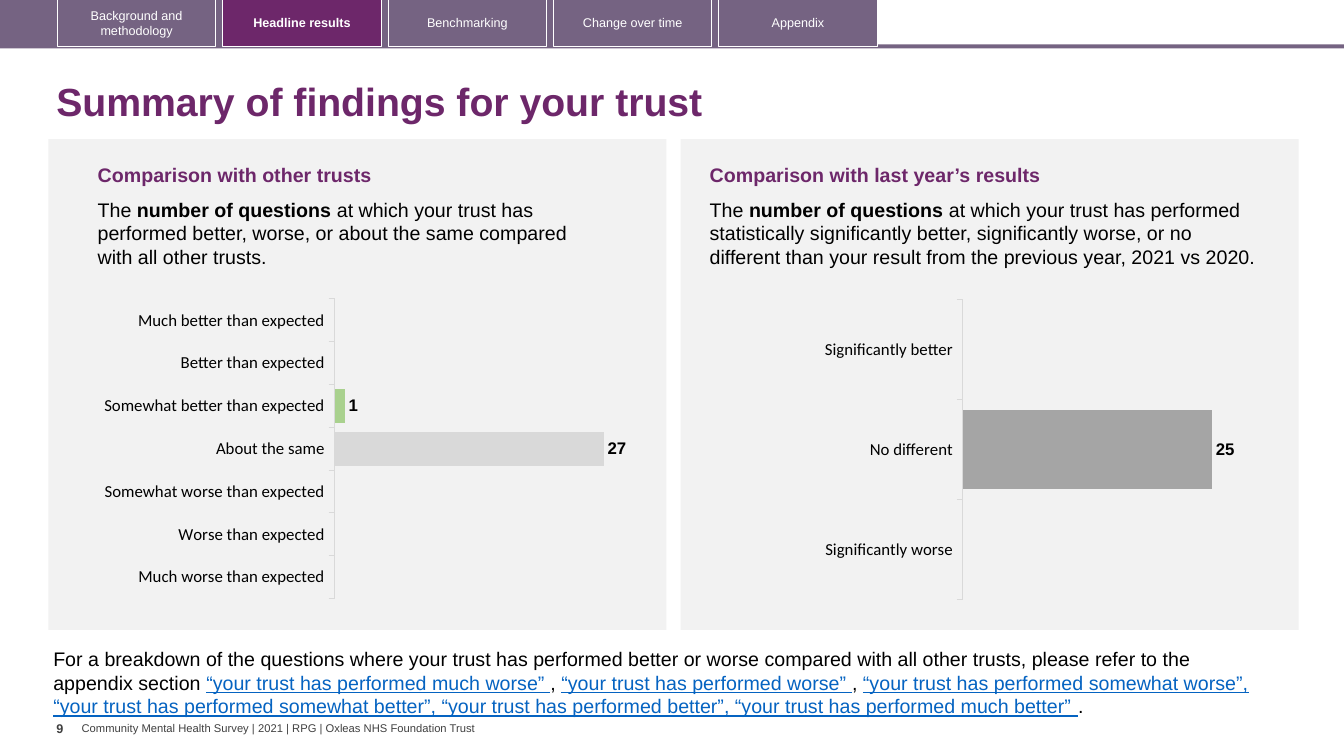
from dataclasses import dataclass
from typing import Optional

from lxml.etree import SubElement
from pptx import Presentation
from pptx.chart.data import CategoryChartData
from pptx.dml.color import RGBColor
from pptx.enum.chart import XL_CHART_TYPE, XL_LABEL_POSITION, XL_TICK_MARK
from pptx.enum.shapes import MSO_SHAPE
from pptx.enum.text import MSO_ANCHOR, PP_ALIGN
from pptx.oxml import parse_xml
from pptx.oxml.ns import nsdecls, qn
from pptx.util import Emu, Pt

PX = 9144  # EMU in one px, 100 px to the inch


@dataclass(frozen=True)
class Theme:
    plum: str = "6D276A"
    mauve: str = "756382"
    panel: str = "F2F2F2"
    white: str = "FFFFFF"
    ink: str = "000000"
    grey: str = "404040"
    link: str = "0563C1"
    axis: str = "D9D9D9"
    series: str = "4472C4"
    font: str = "Arial"
    label: str = "Calibri"
    title: int = 28
    body: int = 14
    chart: int = 12
    base: int = 10
    tab: int = 9
    foot: int = 8


T = Theme()


@dataclass(frozen=True)
class Area:
    x: int
    y: int
    w: int
    h: int

    def emu(self) -> tuple:
        return tuple(Emu(n * PX) for n in (self.x, self.y, self.w, self.h))


@dataclass(frozen=True)
class Run:
    text: str
    bold: bool = False
    link: bool = False


@dataclass(frozen=True)
class Bar:
    name: str
    color: str
    value: Optional[int] = None


@dataclass(frozen=True)
class Panel:
    x: int
    left: int
    head: str
    text: str
    width: int
    height: int
    plot: Area
    bars: tuple


PANELS = (
    Panel(48, 87, "Comparison with other trusts",
          "at which your trust has performed better, worse, or about the same "
          "compared with all other trusts.", 500, 104, Area(41, 272, 623, 341), (
              Bar("Much better than expected", "419999"),
              Bar("Better than expected", "5FBD83"),
              Bar("Somewhat better than expected", "A9D18E", 1),
              Bar("About the same", "D9D9D9", 27),
              Bar("Somewhat worse than expected", "FFD966"),
              Bar("Worse than expected", "F1BE48"),
              Bar("Much worse than expected", "E87722"))),
    Panel(675, 694, "Comparison with last year’s results",
          "at which your trust has performed statistically significantly better, "
          "significantly worse, or no different than your result from the previous "
          "year, 2021 vs 2020.", 565, 81, Area(664, 273, 623, 341), (
              Bar("Significantly better", "9DC3E6"),
              Bar("No different", "A5A5A5", 25),
              Bar("Significantly worse", "7030A0"))),
)
TABS = ("Background and methodology", "Headline results", "Benchmarking",
        "Change over time", "Appendix")
ACTIVE = "Headline results"


def rgb(code: str) -> RGBColor:
    return RGBColor.from_string(code)


def write(shape, *runs: Run, size: int = T.body, color: str = T.ink, align=PP_ALIGN.LEFT,
          anchor=MSO_ANCHOR.TOP, wrap: bool = True, inset: Optional[tuple] = None,
          space: Optional[float] = None) -> None:
    frame = shape.text_frame
    frame.word_wrap, frame.vertical_anchor = wrap, anchor
    if inset is not None:
        frame.margin_left = frame.margin_right = Emu(inset[0] * PX)
        frame.margin_top = frame.margin_bottom = Emu(inset[1] * PX)
    para = frame.paragraphs[0]
    para.alignment = align
    if space:
        para.line_spacing = space
    for item in runs:
        run = para.add_run()
        run.text = item.text
        font = run.font
        font.name, font.size, font.bold = T.font, Pt(size), item.bold
        font.underline = item.link
        font.color.rgb = rgb(T.link if item.link else color)


def text(slide, area: Area, *runs: Run, **form) -> None:
    write(slide.shapes.add_textbox(*area.emu()), *runs, **form)


def block(slide, area: Area, fill: Optional[str] = None, line: Optional[str] = None):
    shape = slide.shapes.add_shape(MSO_SHAPE.RECTANGLE, *area.emu())
    shape.shadow.inherit = False
    if fill:
        shape.fill.solid()
        shape.fill.fore_color.rgb = rgb(fill)
    else:
        shape.fill.background()
    if line:
        shape.line.color.rgb = rgb(line)
        shape.line.width = Pt(0.75)
    else:
        shape.line.fill.background()
    return shape


def place(chart) -> None:
    """Fix the inner plot area and clear the chart background."""
    plot = chart._chartSpace.chart.plotArea
    for old in plot.findall(qn("c:layout")):
        plot.remove(old)
    layout = parse_xml(f"<c:layout {nsdecls('c')}/>")
    manual = SubElement(layout, qn("c:manualLayout"))
    for tag, val in (("layoutTarget", "inner"), ("xMode", "edge"), ("yMode", "edge"),
                     ("x", 0.467), ("y", 0.072), ("w", 0.476), ("h", 0.872)):
        SubElement(manual, qn(f"c:{tag}")).set("val", str(val))
    plot.insert(0, layout)
    chart._chartSpace.chart.addnext(parse_xml(
        f"<c:spPr {nsdecls('c', 'a')}><a:noFill/><a:ln><a:noFill/></a:ln></c:spPr>"))


def graph(slide, area: Area, bars: tuple) -> None:
    data = CategoryChartData()
    data.categories = [bar.name for bar in bars]
    data.add_series("Series 1", [bar.value for bar in bars])
    chart = slide.shapes.add_chart(XL_CHART_TYPE.BAR_CLUSTERED, *area.emu(), data).chart
    chart.has_title = chart.has_legend = False
    chart.font.name, chart.font.size = T.label, Pt(T.base)
    chart.font.color.rgb = rgb(T.ink)
    place(chart)

    # Axes
    names, scale = chart.category_axis, chart.value_axis
    names.reverse_order = True
    names.has_major_gridlines = scale.has_major_gridlines = False
    names.major_tick_mark = XL_TICK_MARK.OUTSIDE
    names.format.line.color.rgb = rgb(T.axis)
    names.format.line.width = Pt(0.75)
    scale.visible = False
    scale.minimum_scale, scale.maximum_scale = 0, 30

    # Bars and their values
    plot = chart.plots[0]
    plot.gap_width, plot.vary_by_categories = 27, False
    series = plot.series[0]
    series.format.fill.solid()
    series.format.fill.fore_color.rgb = rgb(T.series)
    for i, bar in enumerate(bars):
        fill = series.points[i].format.fill
        fill.solid()
        fill.fore_color.rgb = rgb(bar.color)
    marks = series.data_labels
    marks.show_value, marks.position = True, XL_LABEL_POSITION.OUTSIDE_END
    for font, face, bold in ((names.tick_labels.font, T.label, False),
                             (marks.font, T.font, True)):
        font.name, font.size, font.bold = face, Pt(T.chart), bold
        font.color.rgb = rgb(T.ink)


def main() -> None:
    deck = Presentation()
    deck.slide_width, deck.slide_height = Emu(1333 * PX), Emu(750 * PX)
    slide = deck.slides.add_slide(deck.slide_layouts[6])

    # Navigation bar
    block(slide, Area(-3, 44, 1336, 4), T.mauve)
    block(slide, Area(-3, 0, 873, 47), T.mauve)
    for i, name in enumerate(TABS):
        live = name == ACTIVE
        tab = block(slide, Area(57 + 164 * i, -1, 157, 47), T.plum if live else None, T.white)
        write(tab, Run(name, live), size=T.tab, color=T.white,
              align=PP_ALIGN.CENTER, anchor=MSO_ANCHOR.MIDDLE)

    # Title
    text(slide, Area(46, 67, 1249, 72), Run("Summary of findings for your trust", True),
         size=T.title, color=T.plum, anchor=MSO_ANCHOR.MIDDLE, space=0.9)

    # Panels
    for part in PANELS:
        block(slide, Area(part.x, 138, 613, 487), T.panel)
        text(slide, Area(part.left, 157, 552, 34), Run(part.head, True), color=T.plum)
        text(slide, Area(part.left, 191, part.width, part.height), Run("The "),
             Run("number of questions ", True), Run(part.text))
        graph(slide, part.plot, part.bars)

    # Appendix note
    text(slide, Area(43, 637, 1221, 81),
         Run("For a breakdown of the questions where your trust has performed better or worse "
             "compared with all other trusts, please refer to the appendix section "),
         Run("“your trust has performed much worse” ", link=True), Run(", "),
         Run("“your trust has performed worse” ", link=True), Run(", "),
         Run("“your trust has performed somewhat worse”, “your trust has performed somewhat "
             "better”, “your trust has performed better”, “your trust has performed much "
             "better” ", link=True), Run("."))

    # Footer
    text(slide, Area(56, 710, 25, 40), Run("9", True), size=T.tab, color=T.grey,
         wrap=False, inset=(0, 5))
    text(slide, Area(81, 716, 396, 13),
         Run("Community Mental Health Survey | 2021 | RPG | Oxleas NHS Foundation Trust"),
         size=T.foot, color=T.grey, anchor=MSO_ANCHOR.MIDDLE, wrap=False, inset=(0, 0))

    deck.save("out.pptx")


if __name__ == "__main__":
    main()
